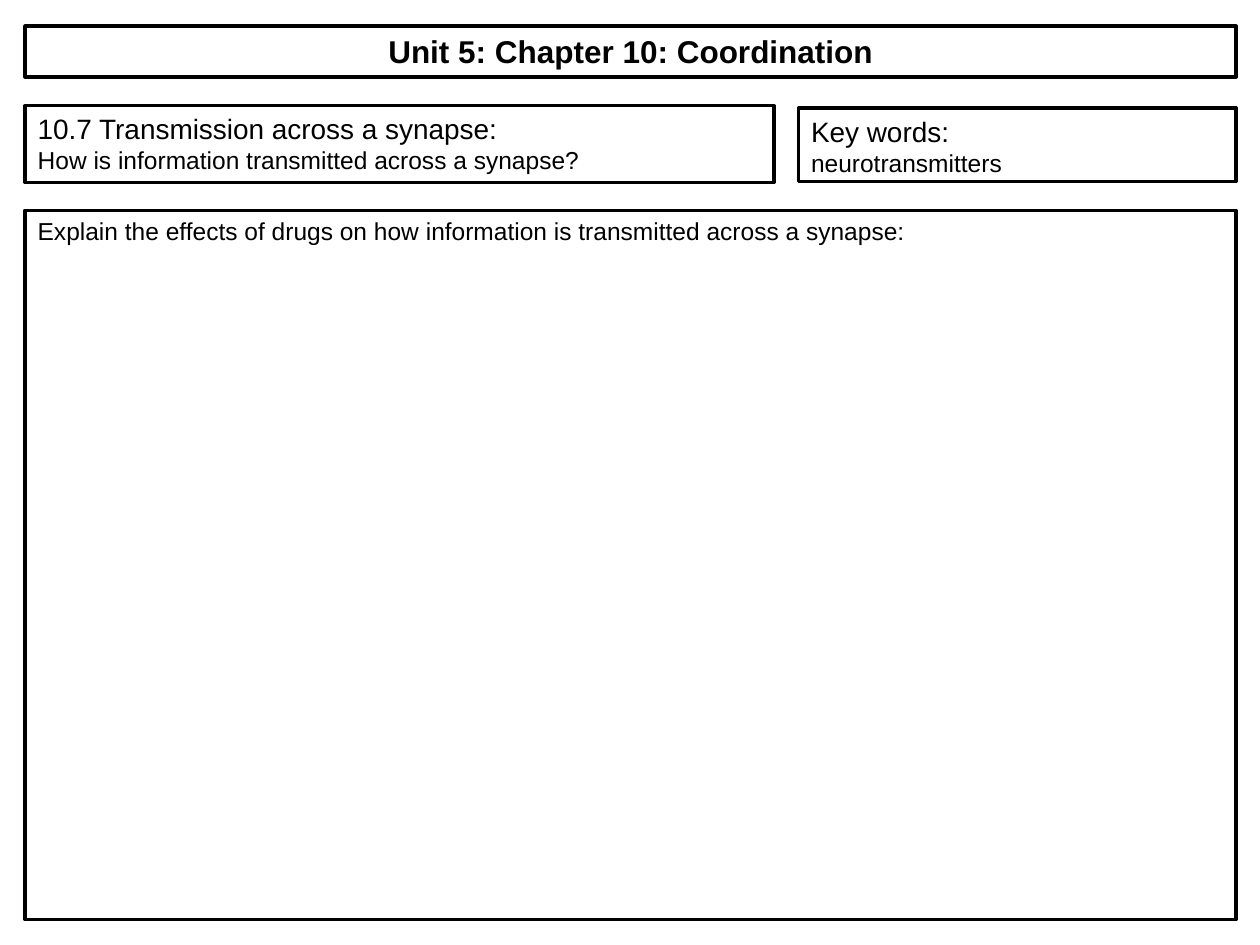
import pptx
import pptx.util
import pptx.dml.color
import pptx.enum.shapes
import pptx.enum.text

Cm, Pt = pptx.util.Cm, pptx.util.Pt
ALIGN = pptx.enum.text.PP_ALIGN
BLACK = pptx.dml.color.RGBColor(0, 0, 0)
WHITE = pptx.dml.color.RGBColor(255, 255, 255)

deck = pptx.Presentation()
deck.slide_width, deck.slide_height = Cm(25.4), Cm(19.05)
slide = deck.slides.add_slide(deck.slide_layouts[6])

# Shared edges of the frames
LEFT, WIDE = 0.51, 24.41

# Each frame: left, top, width, height, alignment, lines of (text, size, bold)
frames = [
    (LEFT, 0.53, WIDE, 1.02, ALIGN.CENTER,
     [("Unit 5: Chapter 10: Coordination", 18, True)]),
    (LEFT, 2.13, 15.09, 1.55, ALIGN.LEFT,
     [("10.7 Transmission across a synapse:", 16, False),
      ("How is information transmitted across a synapse?", 14, False)]),
    (16.1, 2.18, 8.82, 1.48, ALIGN.LEFT,
     [("Key words:", 16, False),
      ("neurotransmitters", 14, False)]),
    (LEFT, 4.24, WIDE, 14.3, ALIGN.LEFT,
     [("Explain the effects of drugs on how information is transmitted "
       "across a synapse:", 14, False)]),
]

for left, top, width, height, align, lines in frames:
    # Outlined box
    box = slide.shapes.add_shape(
        pptx.enum.shapes.MSO_SHAPE.RECTANGLE,
        Cm(left), Cm(top), Cm(width), Cm(height))
    box.shadow.inherit = False
    box.fill.solid()
    box.fill.fore_color.rgb = WHITE
    box.line.color.rgb = BLACK
    box.line.width = Pt(2)

    # Text from the top of the box
    frame = box.text_frame
    frame.word_wrap = True
    frame.vertical_anchor = pptx.enum.text.MSO_ANCHOR.TOP
    for i, (text, size, bold) in enumerate(lines):
        para = frame.add_paragraph() if i else frame.paragraphs[0]
        para.text = text
        para.alignment = align
        para.font.name = "Arial"
        para.font.size = Pt(size)
        para.font.bold = bold
        para.font.color.rgb = BLACK

deck.save("out.pptx")
